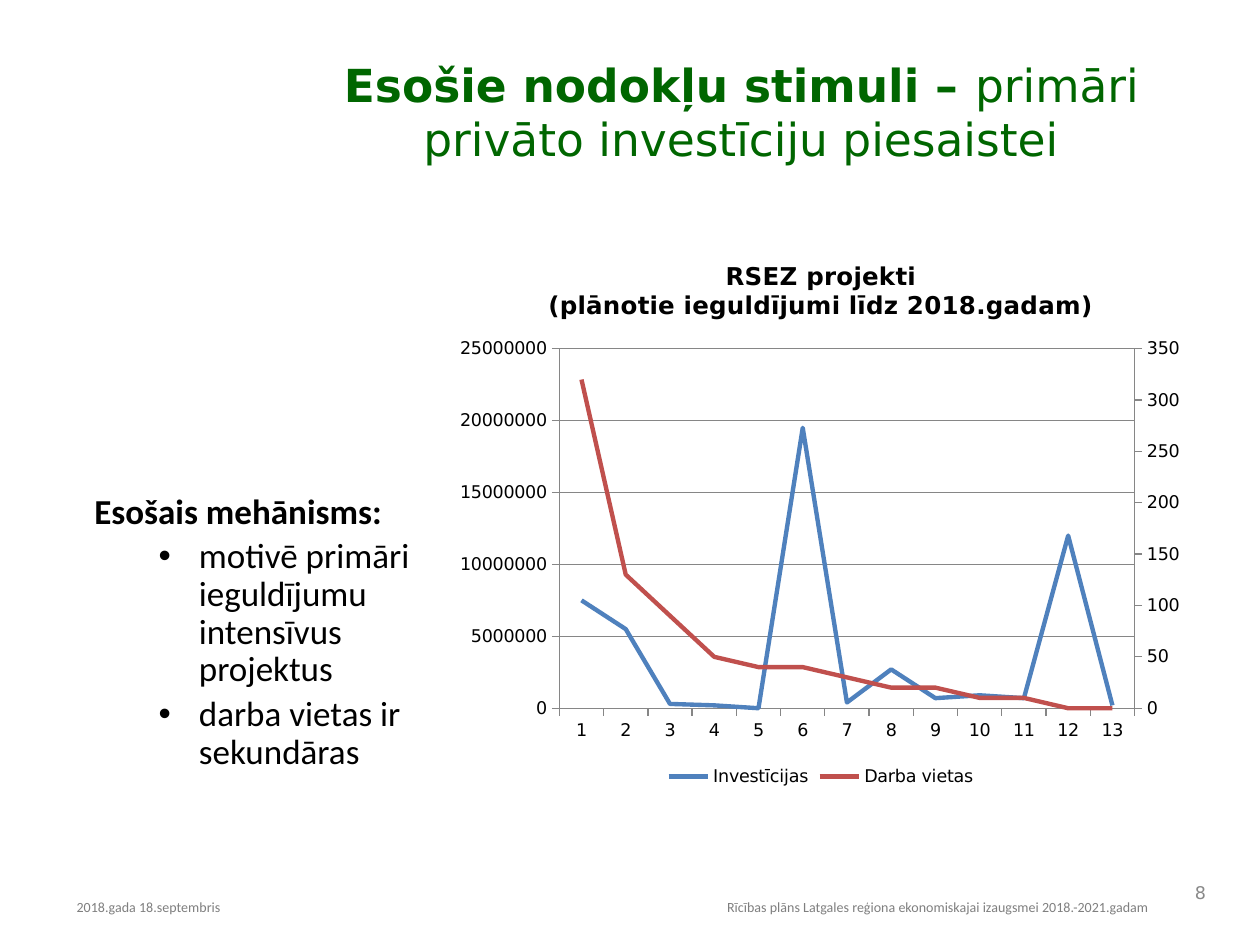
from copy import deepcopy

from pptx import Presentation
from pptx.chart.data import CategoryChartData
from pptx.dml.color import RGBColor
from pptx.enum.chart import XL_CHART_TYPE, XL_LEGEND_POSITION, XL_TICK_MARK
from pptx.enum.text import MSO_ANCHOR, PP_ALIGN
from pptx.oxml import parse_xml
from pptx.oxml.ns import nsdecls, qn
from pptx.util import Inches, Pt

LINE = XL_CHART_TYPE.LINE
BOTTOM = XL_LEGEND_POSITION.BOTTOM
OUTSIDE = XL_TICK_MARK.OUTSIDE
TOP, MIDDLE = MSO_ANCHOR.TOP, MSO_ANCHOR.MIDDLE
LEFT, CENTER, RIGHT, JUSTIFY = PP_ALIGN.LEFT, PP_ALIGN.CENTER, PP_ALIGN.RIGHT, PP_ALIGN.JUSTIFY

BLACK = RGBColor(0x00, 0x00, 0x00)
GREEN = RGBColor(0x00, 0x66, 0x00)
GRAY = RGBColor(0x7F, 0x7F, 0x7F)
NUMBER_GRAY = RGBColor(0x89, 0x89, 0x89)
AXIS_GRAY = RGBColor(0x86, 0x86, 0x86)
BLUE = RGBColor(0x4F, 0x81, 0xBD)
RED = RGBColor(0xC0, 0x50, 0x4D)

BODY, SANS = "Calibri", "DejaVu Sans"
WIDTH, HEIGHT = Inches(10), Inches(7.5)
COLS, ROWS = 100, 75

INVESTMENTS = [7500000, 5500000, 300000, 200000, 0, 19500000, 400000,
               2700000, 700000, 900000, 700000, 12000000, 200000]
JOBS = [320, 130, 90, 50, 40, 40, 30, 20, 20, 10, 10, 0, 0]
PLOT = {"x": 0.15, "y": 0.2, "w": 0.77, "h": 0.65}


def grid(col, row, cols, rows):
    return (int(WIDTH * col / COLS), int(HEIGHT * row / ROWS),
            int(WIDTH * cols / COLS), int(HEIGHT * rows / ROWS))


def add_box(s, cell, anchor=TOP):
    tf = s.shapes.add_textbox(*grid(*cell)).text_frame
    tf.word_wrap = True
    tf.vertical_anchor = anchor
    return tf


def set_font(font, size, name, color, bold=False):
    font.size, font.name, font.bold = Pt(size), name, bold
    font.color.rgb = color


def add_text(p, text, size=20, name=BODY, color=BLACK, bold=False,
             align=LEFT, spacing=None, before=0):
    p.alignment, p.line_spacing, p.space_before = align, spacing, Pt(before)
    r = p.add_run()
    r.text = text
    set_font(r.font, size, name, color, bold)


def add_bullet(p, text):
    pPr = p._p.get_or_add_pPr()
    pPr.set("marL", str(Inches(0.83)))
    pPr.set("indent", str(Inches(-0.32)))
    pPr.append(parse_xml(f'<a:buFont {nsdecls("a")} typeface="Arial"/>'))
    pPr.append(parse_xml(f'<a:buChar {nsdecls("a")} char="•"/>'))
    add_text(p, text, spacing=0.9, before=4)


def set_layout(plot):
    for old in plot.findall(qn("c:layout")):
        plot.remove(old)
    modes = '<c:xMode val="edge"/><c:yMode val="edge"/>'
    sizes = "".join(f'<c:{key} val="{value}"/>' for key, value in PLOT.items())
    plot.insert(0, parse_xml(
        f'<c:layout {nsdecls("c")}><c:manualLayout><c:layoutTarget val="inner"/>'
        f'{modes}{sizes}</c:manualLayout></c:layout>'))


def move_last_to_right_axis(plot):
    lines = plot.find(qn("c:lineChart"))
    cat, val = plot.find(qn("c:catAx")), plot.find(qn("c:valAx"))
    right_lines, right_cat, right_val = deepcopy(lines), deepcopy(cat), deepcopy(val)
    lines.remove(lines.findall(qn("c:ser"))[-1])
    right_lines.remove(right_lines.find(qn("c:ser")))
    for ax_id, number in zip(right_lines.findall(qn("c:axId")), ("501", "502")):
        ax_id.set("val", number)
    for axis, own, cross in ((right_cat, "501", "502"), (right_val, "502", "501")):
        axis.find(qn("c:axId")).set("val", own)
        axis.find(qn("c:crossAx")).set("val", cross)
    right_cat.find(qn("c:delete")).set("val", "1")
    right_val.find(qn("c:axPos")).set("val", "r")
    right_val.find(qn("c:crosses")).set("val", "max")
    right_val.remove(right_val.find(qn("c:majorGridlines")))
    lines.addnext(right_lines)
    val.addnext(right_val)
    right_val.addnext(right_cat)


def format_line(line, color, width):
    line.color.rgb = color
    line.width = Pt(width)


def add_line_chart(s, cell):
    data = CategoryChartData(number_format="0")
    data.categories = [str(n + 1) for n in range(len(JOBS))]
    data.add_series("Investīcijas", INVESTMENTS)
    data.add_series("Darba vietas", JOBS)
    chart = s.shapes.add_chart(LINE, *grid(*cell), data).chart
    set_font(chart.font, 10, SANS, BLACK)

    tf = chart.chart_title.text_frame
    title = dict(size=14, name=SANS, bold=True, align=CENTER)
    add_text(tf.paragraphs[0], "RSEZ projekti", **title)
    add_text(tf.add_paragraph(), "(plānotie ieguldījumi līdz 2018.gadam)", **title)
    chart.chart_title.include_in_layout = False

    chart.has_legend = True
    chart.legend.position = BOTTOM
    chart.legend.include_in_layout = False

    chart.plots[0].vary_by_categories = False
    for series, color in zip(chart.plots[0].series, (BLUE, RED)):
        series.smooth = False
        format_line(series.format.line, color, 2.5)
    for axis in (chart.category_axis, chart.value_axis):
        axis.major_tick_mark = OUTSIDE
        format_line(axis.format.line, AXIS_GRAY, 0.75)
    value_axis = chart.value_axis
    value_axis.has_major_gridlines = True
    format_line(value_axis.major_gridlines.format.line, AXIS_GRAY, 0.75)
    value_axis.tick_labels.number_format = "0"
    value_axis.tick_labels.number_format_is_linked = False

    plot = chart.plots[0]._element.getparent()
    set_layout(plot)
    move_last_to_right_axis(plot)


def add_mechanism(s, cell):
    tf = add_box(s, cell)
    add_text(tf.paragraphs[0], "Esošais mehānisms:", bold=True, align=JUSTIFY, spacing=1.1)
    for text in ("motivē primāri ieguldījumu intensīvus projektus",
                 "darba vietas ir sekundāras"):
        add_bullet(tf.add_paragraph(), text)


def add_title(s, cell):
    p = add_box(s, cell).paragraphs[0]
    title = dict(size=26, name=SANS, color=GREEN, align=CENTER)
    add_text(p, "Esošie nodokļu stimuli – ", bold=True, **title)
    add_text(p, "primāri privāto investīciju piesaistei", **title)


def add_footer(s, cell, text, anchor=TOP, **fmt):
    add_text(add_box(s, cell, anchor).paragraphs[0], text,
             **{"size": 8, "color": GRAY, **fmt})


def main():
    prs = Presentation()
    prs.slide_width, prs.slide_height = WIDTH, HEIGHT
    s = prs.slides.add_slide(prs.slide_layouts[6])
    add_line_chart(s, (35.5, 18.9, 59.3, 43.9))
    add_mechanism(s, (6.5, 38, 30.8, 24.9))
    add_footer(s, (91.7, 69.2, 5, 3.3), "8", MIDDLE,
               size=10, name=SANS, color=NUMBER_GRAY, align=RIGHT)
    add_title(s, (21, 4, 75.7, 8.6))
    add_footer(s, (5.1, 70.8, 28.9, 3.3), "2018.gada 18.septembris")
    add_footer(s, (32.2, 70.8, 60, 3.3),
               "Rīcības plāns Latgales reģiona ekonomiskajai izaugsmei 2018.-2021.gadam",
               align=RIGHT)
    prs.save("out.pptx")


if __name__ == "__main__":
    main()
